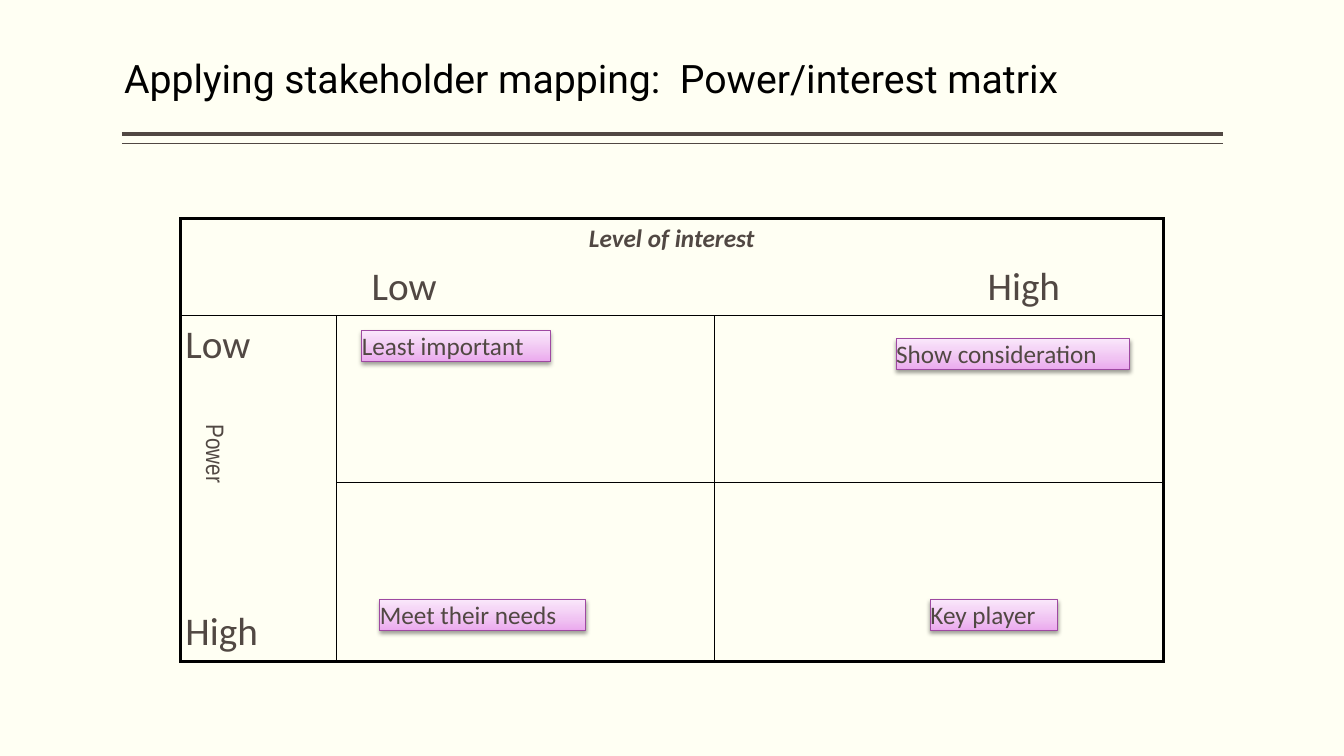
from lxml import etree
from pptx import Presentation
from pptx.dml.color import RGBColor
from pptx.enum.shapes import MSO_CONNECTOR as Connector, MSO_SHAPE as Shape
from pptx.enum.text import MSO_ANCHOR as Anchor, PP_ALIGN as Align
from pptx.oxml import parse_xml
from pptx.oxml.ns import nsdecls, qn
from pptx.util import Pt

TITLE = "Applying stakeholder mapping:  Power/interest matrix"
INTEREST = ["Level of interest", "\tLow\tHigh"]
POWER_LEVELS = ["Low", "High"]
POWER = "Power"
LABELS = [
    ("Meet their needs", 271.4, 428.4, 146.9),
    ("Least important", 258.5, 236.2, 134.6),
    ("Key player", 664.6, 428.4, 90.7),
    ("Show consideration", 640.1, 241.9, 167),
]
RULES = [(95.8, 3), (102.6, 1)]
COLUMNS = [111.6, 270, 320.4]
ROWS = [69.1, 118.8, 123.8]
REGIONS = [(0, 0, 0, 2), (1, 0, 2, 0), (1, 1, 1, 1), (1, 2, 1, 2), (2, 1, 2, 1), (2, 2, 2, 2)]
TAB_STOPS = [133, 573]
GRADIENT = [(0, "EBA9EE"), (35, "F0C3F2"), (100, "FAE7FB")]
INK, BLACK, EDGE, PAPER = "514843", "000000", "9E49A1", "FFFFF3"
OUTER, INNER = 2.25, 1


def color(value):
    return RGBColor.from_string(value)


def format_text(paragraph, size, font, ink=INK, bold=False, italic=False):
    for run in paragraph.runs:
        run.font.size = Pt(size)
        run.font.name = font
        run.font.color.rgb = color(ink)
        run.font.bold = bold
        run.font.italic = italic


def set_margins(frame, horizontal=0, vertical=0):
    frame.margin_left = frame.margin_right = Pt(horizontal)
    frame.margin_top = frame.margin_bottom = Pt(vertical)


def set_borders(cell, widths):
    properties = cell._tc.get_or_add_tcPr()
    for index, (side, width) in enumerate(zip("LRTB", widths)):
        line = parse_xml(
            f'<a:ln{side} {nsdecls("a")} w="{Pt(width)}"><a:solidFill>'
            f'<a:srgbClr val="{BLACK}"/></a:solidFill></a:ln{side}>')
        properties.insert(index, line)


def add_title(slide):
    title = slide.shapes.title
    title.left, title.top, title.width, title.height = Pt(88.6), Pt(36), Pt(823), Pt(40.3)
    frame = title.text_frame
    frame.text = TITLE
    frame.vertical_anchor = Anchor.BOTTOM
    set_margins(frame, 0, 3.6)
    paragraph = frame.paragraphs[0]
    paragraph.alignment = Align.LEFT
    paragraph.line_spacing = 0.9
    format_text(paragraph, 28, "Roboto", BLACK)


def add_rules(slide):
    for top, width in RULES:
        rule = slide.shapes.add_connector(Connector.STRAIGHT, Pt(87.1), Pt(top), Pt(873.4), Pt(top))
        rule.line.color.rgb = color(INK)
        rule.line.width = Pt(width)
        etree.SubElement(rule._element.spPr, qn("a:effectLst"))


def fill_interest(cell):
    frame = cell.text_frame
    frame.text = "\n".join(INTEREST)
    heading, levels = frame.paragraphs
    heading.alignment = Align.CENTER
    heading.space_before = Pt(4)
    format_text(heading, 18, "Calibri", bold=True, italic=True)
    levels.alignment = Align.LEFT
    levels.space_before = Pt(6)
    format_text(levels, 28, "Calibri")
    tabs = etree.SubElement(levels._p.get_or_add_pPr(), qn("a:tabLst"))
    for position in TAB_STOPS:
        etree.SubElement(tabs, qn("a:tab"), pos=str(Pt(position)), algn="l")


def fill_power(cell):
    frame = cell.text_frame
    frame.text = "\n".join(POWER_LEVELS)
    for paragraph, gap in zip(frame.paragraphs, (6, 171)):
        paragraph.space_before = Pt(gap)
        format_text(paragraph, 28, "Calibri")


def add_matrix(slide):
    frame = slide.shapes.add_table(
        len(ROWS), len(COLUMNS), Pt(128.9), Pt(156.2), Pt(sum(COLUMNS)), Pt(sum(ROWS)))
    table = frame.table
    table.first_row = table.horz_banding = False
    for column, width in zip(table.columns, COLUMNS):
        column.width = Pt(width)
    for row, height in zip(table.rows, ROWS):
        row.height = Pt(height)
    for top, left, bottom, right in REGIONS:
        outside = (left == 0, right == len(COLUMNS) - 1, top == 0, bottom == len(ROWS) - 1)
        widths = [OUTER if edge else INNER for edge in outside]
        for row in range(top, bottom + 1):
            for column in range(left, right + 1):
                cell = table.cell(row, column)
                cell.fill.background()
                set_margins(cell, 3.6, 3.6)
                set_borders(cell, widths)
        if (top, left) != (bottom, right):
            table.cell(top, left).merge(table.cell(bottom, right))
    fill_interest(table.cell(0, 0))
    fill_power(table.cell(1, 0))


def add_power(slide):
    box = slide.shapes.add_textbox(Pt(123.1), Pt(311.8), Pt(62.6), Pt(24.5))
    box.rotation = 90
    frame = box.text_frame
    frame.text = POWER
    frame.word_wrap = True
    frame.vertical_anchor = Anchor.MIDDLE
    set_margins(frame)
    frame.paragraphs[0].alignment = Align.CENTER
    format_text(frame.paragraphs[0], 18, "Arial Narrow")


def add_label(slide, text, left, top, width):
    label = slide.shapes.add_shape(Shape.RECTANGLE, Pt(left), Pt(top), Pt(width), Pt(21.8))
    label.line.color.rgb = color(EDGE)
    label.line.width = Pt(0.75)
    label.shadow.inherit = False
    properties = label._element.spPr
    stops = "".join(
        f'<a:gs pos="{position * 1000}"><a:srgbClr val="{value}"/></a:gs>'
        for position, value in GRADIENT)
    properties.insert(2, parse_xml(
        f'<a:gradFill {nsdecls("a")} rotWithShape="1"><a:gsLst>{stops}</a:gsLst>'
        '<a:lin ang="16200000" scaled="0"/></a:gradFill>'))
    properties.find(qn("a:effectLst")).append(parse_xml(
        f'<a:outerShdw {nsdecls("a")} blurRad="{Pt(3)}" dist="{Pt(1.6)}" dir="5400000" '
        f'rotWithShape="0"><a:srgbClr val="{BLACK}"><a:alpha val="38000"/></a:srgbClr></a:outerShdw>'))
    frame = label.text_frame
    frame.text = text
    frame.word_wrap = True
    frame.vertical_anchor = Anchor.TOP
    set_margins(frame)
    frame.paragraphs[0].alignment = Align.LEFT
    format_text(frame.paragraphs[0], 18, "Calibri")


def main():
    presentation = Presentation()
    presentation.slide_width, presentation.slide_height = Pt(960), Pt(540)
    slide = presentation.slides.add_slide(presentation.slide_layouts[5])
    slide.background.fill.solid()
    slide.background.fill.fore_color.rgb = color(PAPER)
    add_rules(slide)
    add_title(slide)
    add_matrix(slide)
    add_power(slide)
    for label in LABELS:
        add_label(slide, *label)
    presentation.save("out.pptx")


if __name__ == "__main__":
    main()
